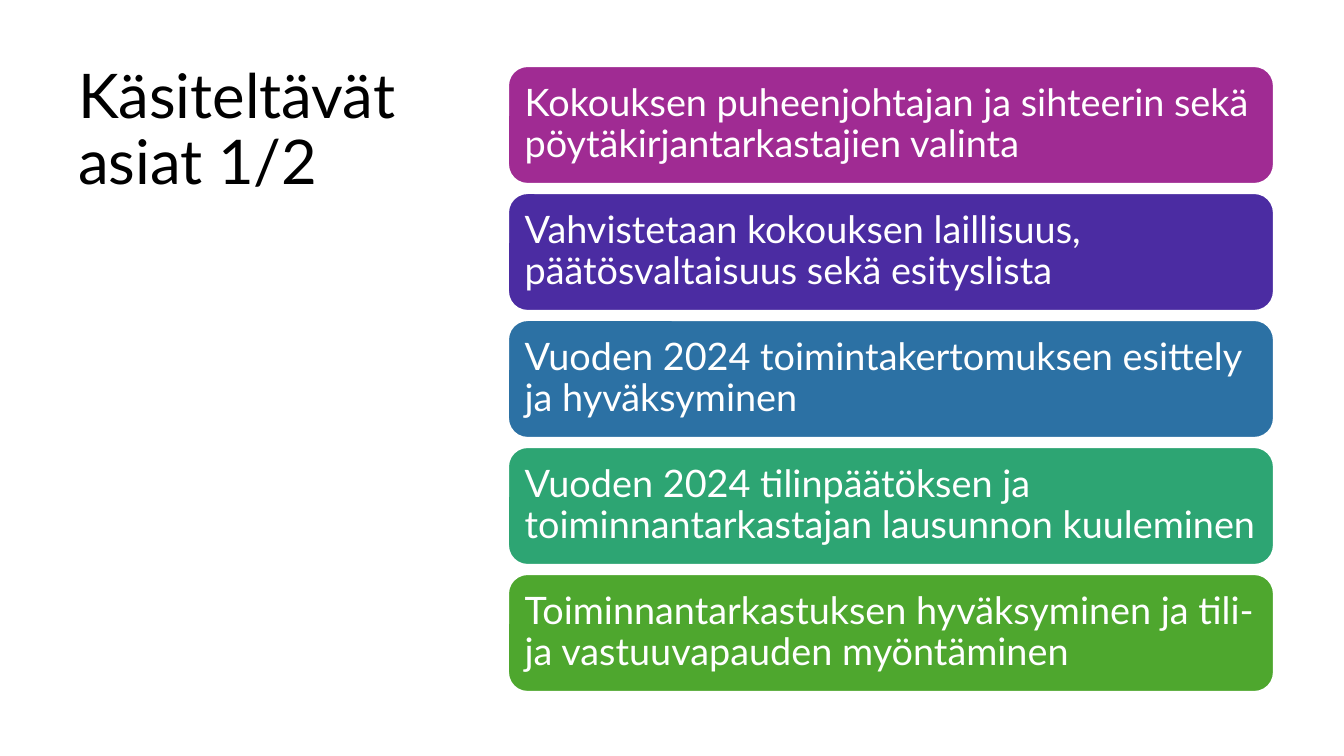
import pptx
import pptx.util
import pptx.dml.color
import pptx.enum.shapes
import pptx.enum.text

RGBColor = pptx.dml.color.RGBColor
BLACK = RGBColor(0x00, 0x00, 0x00)
WHITE = RGBColor(0xFF, 0xFF, 0xFF)
PURPLE = RGBColor(0xA0, 0x2B, 0x93)
INDIGO = RGBColor(0x4B, 0x2C, 0xA2)
BLUE = RGBColor(0x2C, 0x71, 0xA4)
TEAL = RGBColor(0x2D, 0xA5, 0x73)
GREEN = RGBColor(0x4E, 0xA7, 0x2E)

AGENDA = [
    ("Kokouksen puheenjohtajan ja sihteerin sekä pöytäkirjantarkastajien valinta", PURPLE),
    ("Vahvistetaan kokouksen laillisuus, päätösvaltaisuus sekä esityslista", INDIGO),
    ("Vuoden 2024 toimintakertomuksen esittely ja hyväksyminen", BLUE),
    ("Vuoden 2024 tilinpäätöksen ja toiminnantarkastajan lausunnon kuuleminen", TEAL),
    ("Toiminnantarkastuksen hyväksyminen ja tili- ja vastuuvapauden myöntäminen", GREEN),
]
CARD_LEFT, CARD_TOP, CARD_WIDTH, CARD_HEIGHT = 508, 66, 766, 118
CARD_PITCH = 127


def px(length):
    return pptx.util.Emu(round(length * 914400 / 100.8))


class AgendaSlide:
    font_name = "Lato"
    line_spacing = 0.9
    card_inset = 11

    def __init__(self, presentation):
        title_only = presentation.slide_layouts[5]
        self.slide = presentation.slides.add_slide(title_only)

    def set_text(self, frame, text, size, color, anchor):
        frame.text = text
        frame.word_wrap = True
        frame.auto_size = pptx.enum.text.MSO_AUTO_SIZE.NONE
        frame.vertical_anchor = anchor
        paragraph = frame.paragraphs[0]
        paragraph.alignment = pptx.enum.text.PP_ALIGN.LEFT
        paragraph.line_spacing = self.line_spacing
        paragraph.font.name = self.font_name
        paragraph.font.size = pptx.util.Pt(size)
        paragraph.font.color.rgb = color

    def title(self, text, left, top, width, height):
        heading = self.slide.shapes.title
        heading.left, heading.top = px(left), px(top)
        heading.width, heading.height = px(width), px(height)
        self.set_text(heading.text_frame, text, 44, BLACK, pptx.enum.text.MSO_ANCHOR.TOP)

    def card(self, text, fill, left, top, width, height):
        card = self.slide.shapes.add_shape(
            pptx.enum.shapes.MSO_SHAPE.ROUNDED_RECTANGLE,
            px(left), px(top), px(width), px(height))
        card.shadow.inherit = False
        card.fill.solid()
        card.fill.fore_color.rgb = fill
        card.line.color.rgb = WHITE
        card.line.width = pptx.util.Pt(1.5)
        frame = card.text_frame
        frame.margin_left = frame.margin_right = px(self.card_inset)
        frame.margin_top = frame.margin_bottom = px(self.card_inset)
        self.set_text(frame, text, 27, WHITE, pptx.enum.text.MSO_ANCHOR.MIDDLE)


def main():
    presentation = pptx.Presentation()
    presentation.slide_width = px(1344)
    presentation.slide_height = px(756)
    agenda = AgendaSlide(presentation)
    agenda.title("Käsiteltävät asiat 1/2", 68, 60, 385, 639)
    for row, (topic, color) in enumerate(AGENDA):
        agenda.card(topic, color, CARD_LEFT, CARD_TOP + row * CARD_PITCH,
                    CARD_WIDTH, CARD_HEIGHT)
    presentation.save("out.pptx")


if __name__ == "__main__":
    main()
